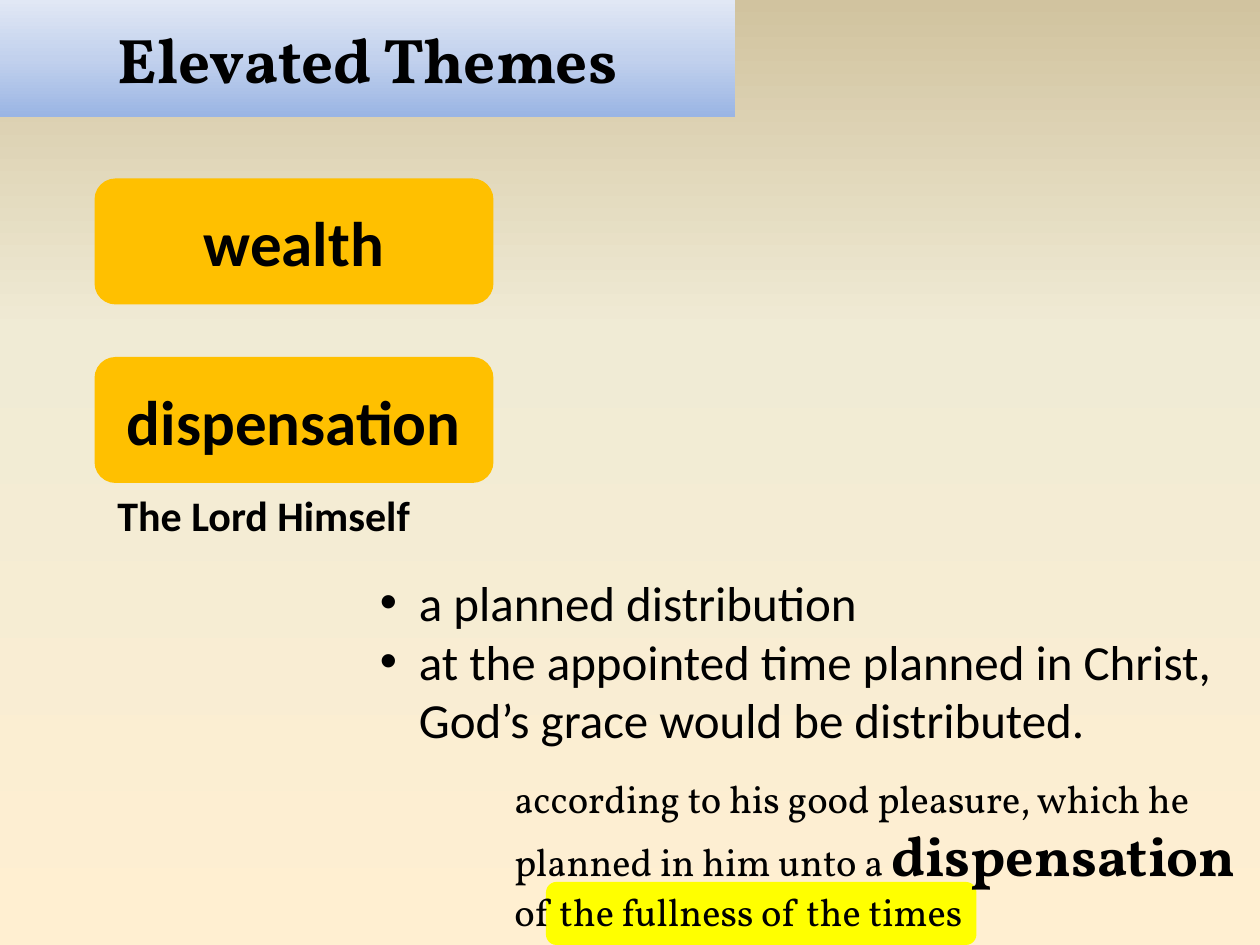
from copy import deepcopy
from dataclasses import dataclass
from typing import Optional

from lxml import etree
from pptx import Presentation
from pptx import util as u
from pptx.dml.color import RGBColor
from pptx.enum import shapes, text
from pptx.oxml.ns import qn

COLUMN = u.Inches(10 / 12)
ROW = u.Inches(7.5 / 18)


@dataclass(frozen=True)
class Theme:
    ink: str = "000000"
    label: str = "FFC000"
    highlight: str = "FFFF00"
    backdrop: tuple = ((0, "FFEFD1"), (0.65, "F0EBD5"), (1, "D1C39F"))
    banner: tuple = ((0, "9AB5E4"), (0.5, "C2D1ED"), (1, "E1E8F5"))
    sans: str = "Calibri"
    serif: str = "Vollkorn"
    heading: int = 36
    emphasis: int = 32
    point: int = 28
    note: int = 24
    verse: int = 22


THEME = Theme()


@dataclass(frozen=True)
class Area:
    column: float
    row: float
    columns: float
    rows: float

    def box(self) -> tuple:
        return (u.Emu(int(self.column * COLUMN)), u.Emu(int(self.row * ROW)),
                u.Emu(int(self.columns * COLUMN)), u.Emu(int(self.rows * ROW)))


@dataclass(frozen=True)
class Span:
    words: str
    size: int
    font: str = THEME.sans
    bold: bool = False


@dataclass(frozen=True)
class Passage:
    area: Area
    paragraphs: tuple
    bullet: Optional[str] = None


@dataclass(frozen=True)
class Plate:
    area: Area
    color: str
    word: Optional[str] = None


PLATES = [
    Plate(Area(5.2, 16.8, 4.1, 1.2), THEME.highlight),
    Plate(Area(0.9, 3.4, 3.8, 2.4), THEME.label, "wealth"),
    Plate(Area(0.9, 6.8, 3.8, 2.4), THEME.label, "dispensation"),
]

PASSAGES = [
    Passage(Area(1, 9.2, 10.5, 1.2), (
        (Span("The Lord Himself", THEME.note, bold=True),),
    )),
    Passage(Area(4.78, 14.64, 7.26, 3.31), ((
        Span("according to his good pleasure, which he planned in him unto a ",
             THEME.verse, THEME.serif),
        Span("dispensation", THEME.emphasis, THEME.serif, True),
        Span(" ", THEME.note, THEME.serif, True),
        Span("of the fullness of the times", THEME.verse, THEME.serif),
    ),)),
    Passage(Area(3.5, 10.78, 8.2, 3.62), (
        (Span("a planned distribution", THEME.point),),
        (Span("at the appointed time planned in Christ, "
              "God’s grace would be distributed.", THEME.point),),
    ), "•"),
]


def paint_gradient(fill, owner, stops: tuple) -> None:
    fill.gradient()
    fill.gradient_angle = 90
    stop_list = next(owner.iter(qn("a:gsLst")))
    while len(stop_list) < len(stops):
        stop_list.append(deepcopy(stop_list[-1]))
    for stop, (position, color) in zip(fill.gradient_stops, stops):
        stop.position = position
        stop.color.rgb = RGBColor.from_string(color)


def write(paragraph, spans: tuple) -> None:
    for span in spans:
        run = paragraph.add_run()
        run.text = span.words
        run.font.size = u.Pt(span.size)
        run.font.name = span.font
        run.font.bold = span.bold
        run.font.color.rgb = RGBColor.from_string(THEME.ink)


def write_centred(frame, span: Span) -> None:
    frame.word_wrap = True
    frame.auto_size = text.MSO_AUTO_SIZE.NONE
    frame.vertical_anchor = text.MSO_ANCHOR.MIDDLE
    frame.paragraphs[0].alignment = text.PP_ALIGN.CENTER
    write(frame.paragraphs[0], (span,))


def add_bullet(paragraph, symbol: str) -> None:
    properties = paragraph._p.get_or_add_pPr()
    indent = u.Inches(0.31)
    properties.set("marL", str(indent))
    properties.set("indent", str(-indent))
    etree.SubElement(properties, qn("a:buFont")).set("typeface", "Arial")
    etree.SubElement(properties, qn("a:buChar")).set("char", symbol)


def place_title(slide, area: Area, words: str) -> None:
    title = slide.shapes.title
    title.left, title.top, title.width, title.height = area.box()
    paint_gradient(title.fill, title._element, THEME.banner)
    write_centred(title.text_frame, Span(words, THEME.heading, THEME.serif, True))


def add_plate(slide, plate: Plate) -> None:
    panel = slide.shapes.add_shape(
        shapes.MSO_SHAPE.ROUNDED_RECTANGLE, *plate.area.box())
    panel.shadow.inherit = False
    panel.fill.solid()
    panel.fill.fore_color.rgb = RGBColor.from_string(plate.color)
    panel.line.fill.background()
    if plate.word:
        write_centred(panel.text_frame, Span(plate.word, THEME.heading, bold=True))


def add_passage(slide, passage: Passage) -> None:
    frame = slide.shapes.add_textbox(*passage.area.box()).text_frame
    frame.word_wrap = True
    frame.auto_size = text.MSO_AUTO_SIZE.SHAPE_TO_FIT_TEXT
    for index, spans in enumerate(passage.paragraphs):
        paragraph = frame.add_paragraph() if index else frame.paragraphs[0]
        if passage.bullet:
            add_bullet(paragraph, passage.bullet)
        write(paragraph, spans)


def main() -> None:
    deck = Presentation()
    deck.slide_width, deck.slide_height = u.Inches(10), u.Inches(7.5)
    slide = deck.slides.add_slide(deck.slide_layouts.get_by_name("Title Only"))
    paint_gradient(slide.background.fill, slide._element, THEME.backdrop)
    place_title(slide, Area(0, 0, 7, 2.23), "Elevated Themes")
    for plate in PLATES:
        add_plate(slide, plate)
    for passage in PASSAGES:
        add_passage(slide, passage)
    deck.save("out.pptx")


if __name__ == "__main__":
    main()
